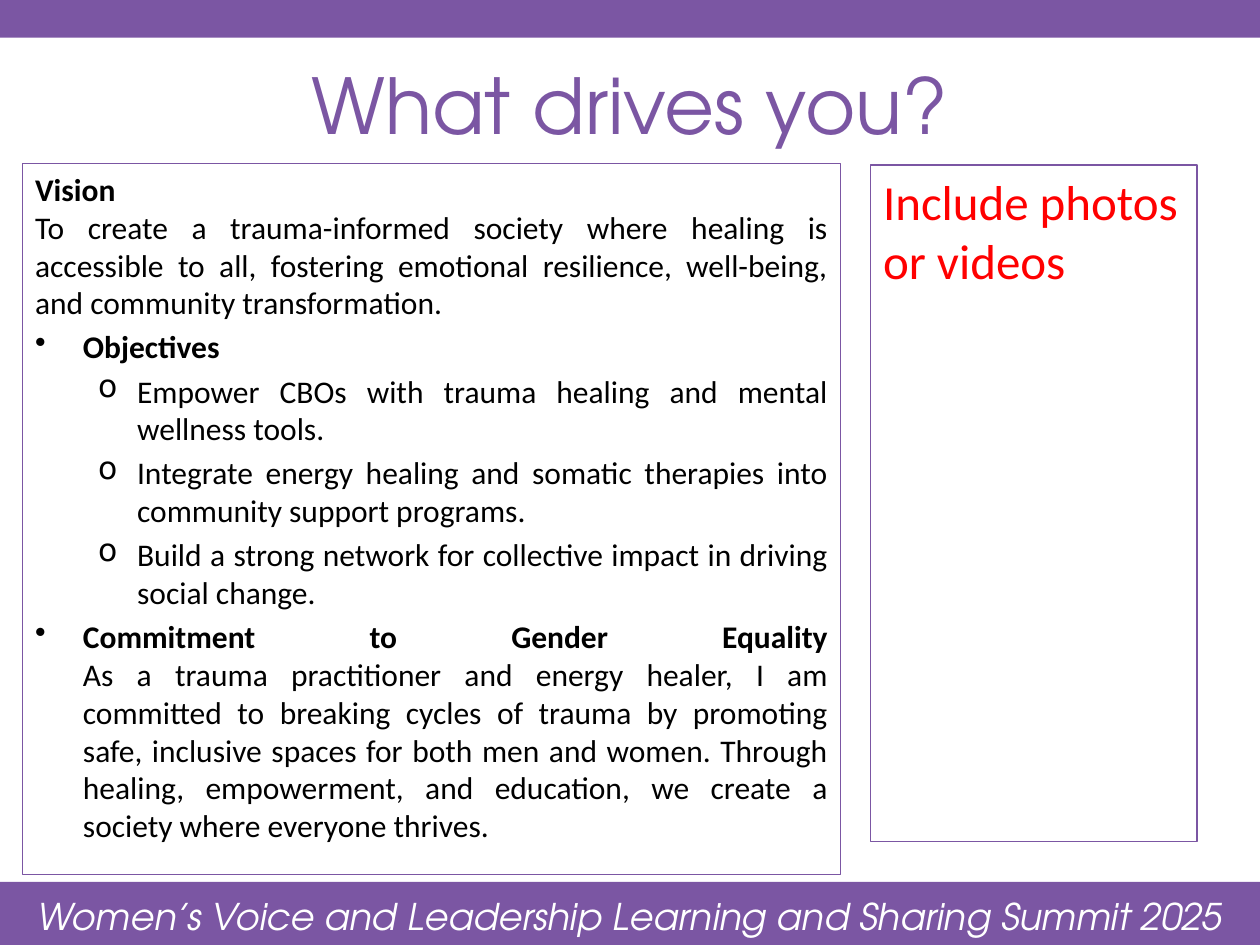
from collections import namedtuple

from lxml.etree import SubElement
from pptx import Presentation
from pptx.dml.color import RGBColor
from pptx.enum.shapes import MSO_SHAPE
from pptx.enum.text import MSO_ANCHOR, PP_ALIGN
from pptx.oxml.ns import qn
from pptx.util import Inches, Pt

COLORS = {"purple": "7B56A3", "white": "FFFFFF", "black": "000000", "red": "FF0000"}
DISPLAY, BODY = "TeX Gyre Adventor", "Calibri"
WIDTH, HEIGHT = 10, 7.5

Box = namedtuple("Box", "left top width height")
Level = namedtuple("Level", "bullet margin hanging")

PLAIN = Level(None, 0, 0)
TOPIC = Level("•", 0.38, 0.38)
DETAIL = Level("o", 0.81, 0.31)

# Each entry: level, bold heading, regular text
STATEMENTS = [
    (PLAIN, "Vision", "To create a trauma-informed society where healing is accessible to all, "
     "fostering emotional resilience, well-being, and community transformation."),
    (TOPIC, "Objectives", ""),
    (DETAIL, "", "Empower CBOs with trauma healing and mental wellness tools."),
    (DETAIL, "", "Integrate energy healing and somatic therapies into community support programs."),
    (DETAIL, "", "Build a strong network for collective impact in driving social change."),
    (TOPIC, "Commitment to Gender Equality",
     "As a trauma practitioner and energy healer, I am committed to breaking cycles of trauma "
     "by promoting safe, inclusive spaces for both men and women. Through healing, "
     "empowerment, and education, we create a society where everyone thrives."),
]


def color(name):
    return RGBColor.from_string(COLORS[name])


def emu(box):
    return [Inches(length) for length in box]


def add_run(paragraph, text, size, font, shade, bold=False, italic=False):
    run = paragraph.add_run()
    run.text = text
    run.font.size = Pt(size)
    run.font.name = font
    run.font.bold = bold
    run.font.italic = italic
    run.font.color.rgb = color(shade)


def set_level(paragraph, level):
    if not level.bullet:
        return
    properties = paragraph._p.get_or_add_pPr()
    properties.set("marL", str(Inches(level.margin)))
    properties.set("indent", str(-Inches(level.hanging)))
    if level is DETAIL:
        paragraph.level = 1
    SubElement(properties, qn("a:buChar")).set("char", level.bullet)


def add_band(slide, box):
    band = slide.shapes.add_shape(MSO_SHAPE.RECTANGLE, *emu(box))
    band.shadow.inherit = False
    band.fill.solid()
    band.fill.fore_color.rgb = color("purple")
    band.line.fill.background()


def add_footer(slide, box):
    add_band(slide, box)
    margin = 0.017 * box.width
    caption_box = Box(box.left + margin, box.top + 0.02, box.width - 2 * margin, box.height - 0.02)
    caption = slide.shapes.add_textbox(*emu(caption_box)).text_frame
    caption.word_wrap = True
    line = caption.paragraphs[0]
    line.alignment = PP_ALIGN.CENTER
    line.line_spacing = 1.07
    add_run(line, "Women’s Voice and Leadership Learning and Sharing Summit 2025",
            21, DISPLAY, "white", italic=True)


def add_title(slide, box):
    title = slide.shapes.title
    title.left, title.top, title.width, title.height = emu(box)
    title.text_frame.vertical_anchor = MSO_ANCHOR.MIDDLE
    line = title.text_frame.paragraphs[0]
    line.alignment = PP_ALIGN.CENTER
    add_run(line, "What drives you?", 44, DISPLAY, "purple")


def add_panel(slide, box):
    """Add an outlined, unfilled box and return its text frame."""
    panel = slide.shapes.add_shape(MSO_SHAPE.RECTANGLE, *emu(box))
    panel.shadow.inherit = False
    panel.fill.background()
    panel.line.color.rgb = color("purple")
    panel.line.width = Pt(0.75)
    frame = panel.text_frame
    frame.word_wrap = True
    frame.vertical_anchor = MSO_ANCHOR.TOP
    return frame


def add_statements(slide, box):
    frame = add_panel(slide, box)
    for index, (level, heading, text) in enumerate(STATEMENTS):
        paragraph = frame.add_paragraph() if index else frame.paragraphs[0]
        set_level(paragraph, level)
        paragraph.alignment = PP_ALIGN.JUSTIFY
        paragraph.space_before = Pt(3.6 if index else 0)
        if heading:
            add_run(paragraph, heading, 18, BODY, "black", bold=True)
        if heading and text:
            paragraph.add_line_break()
        if text:
            add_run(paragraph, text, 18, BODY, "black")


def add_media_panel(slide, box):
    prompt = add_panel(slide, box).paragraphs[0]
    prompt.alignment = PP_ALIGN.LEFT
    add_run(prompt, "Include photos or videos", 28, BODY, "red")


def main():
    deck = Presentation()
    deck.slide_width, deck.slide_height = Inches(WIDTH), Inches(HEIGHT)
    slide = deck.slides.add_slide(deck.slide_layouts[5])
    footer_height = HEIGHT / 15
    add_band(slide, Box(0, 0, WIDTH, HEIGHT / 25))
    add_footer(slide, Box(0, HEIGHT - footer_height, WIDTH, footer_height))
    add_title(slide, Box(0, 0.36, WIDTH, 0.92))
    add_statements(slide, Box(0.18, 1.3, 6.49, 5.64))
    add_media_panel(slide, Box(6.91, 1.31, 2.59, 5.37))
    deck.save("out.pptx")


if __name__ == "__main__":
    main()
